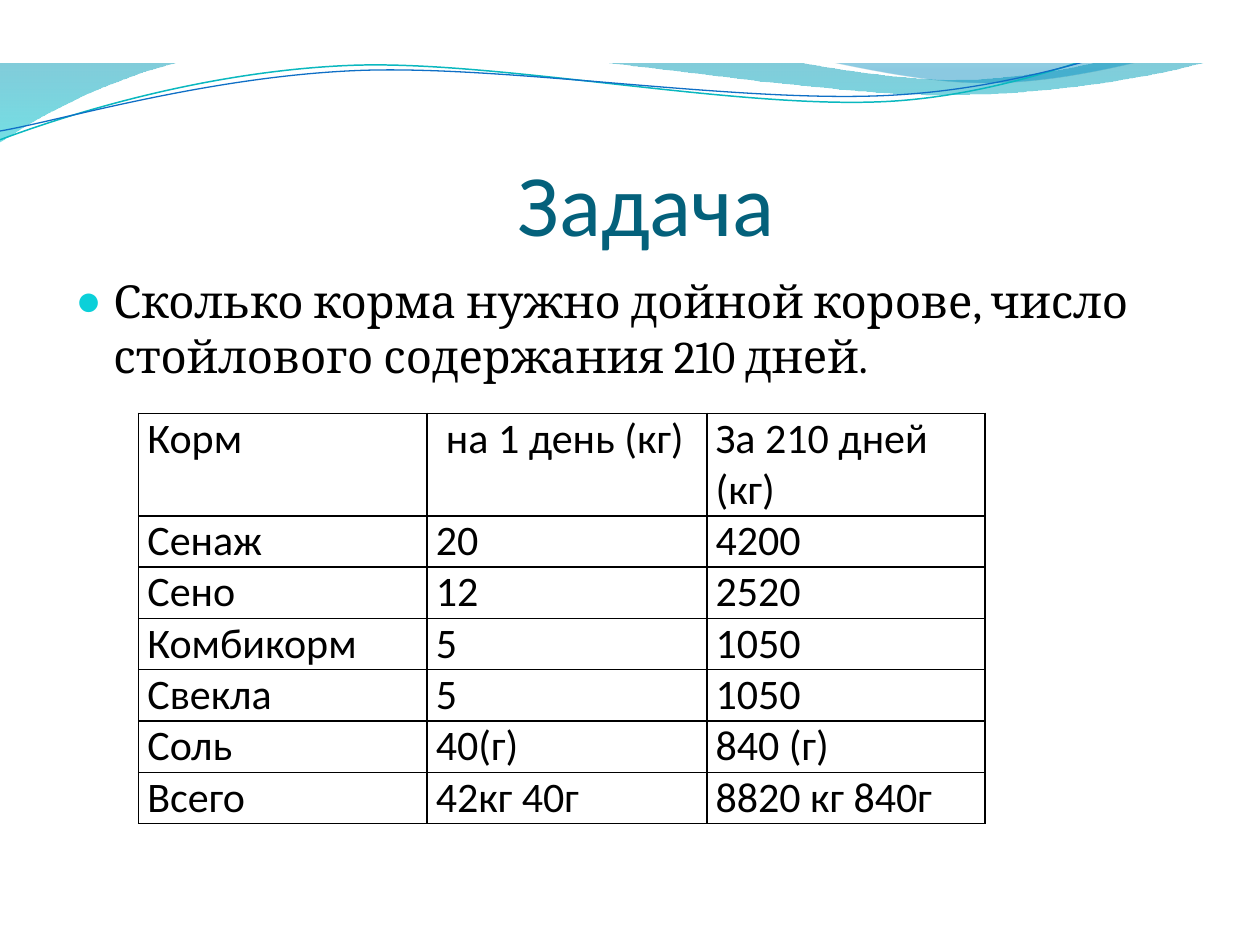
import math
from dataclasses import dataclass

from lxml import etree
from pptx import Presentation
from pptx.dml.color import RGBColor
from pptx.enum import shapes, text
from pptx.oxml import ns
from pptx.util import Inches, Pt


@dataclass(frozen=True)
class Theme:
    title: str = "04617B"
    ink: str = "000000"
    paper: str = "FFFFFF"
    bullet: str = "0BD0D9"
    heading_font: str = "Calibri"
    body_font: str = "Cambria"
    title_size: int = 50
    body_size: int = 26
    table_size: int = 24


THEME = Theme()
WAVE_TILT = -2.7

# Bands: box, start, segments (2 numbers = line, 6 = curve),
# gradient (position, colour, opacity)
BANDS = [
    ((-0.01, -0.01, 10.02, 1.14), (0, 0),
     [(4.4, -0.01), (4.76, 0.17, 6.64, 0.63, 7.58, 0.63),
      (8.53, 0.63, 9.58, 0.26, 10, 0.09), (10.01, 0.36),
      (9.83, 0.44, 8.7, 0.76, 7.46, 0.75), (6.22, 0.75, 3.82, 0.28, 2.57, 0.34),
      (1.29, 0.36, 0.46, 0.83, -0.01, 1.13), (0, 0)],
     [(0, "0074A1", 45), (1, "00C6CF", 55)]),
    ((4.79, -0.01, 5.21, 0.7), (4.79, -0.01),
     [(5.09, 0.11, 6.82, 0.62, 7.69, 0.65), (8.56, 0.69, 9.61, 0.32, 10, 0.21),
      (10, 0), (4.79, -0.01)],
     [(0, "00A1A9", 30), (0.8, "008BBF", 45)]),
]

# Thin waves: box before tilting, start, segments, colour, width
WAVES = [
    ((-0.02, 0.22, 10.02, 0.71), (0, 1.11),
     [(0.48, 0.93, 1.58, 0.57, 2.77, 0.52), (3.95, 0.47, 5.93, 0.89, 7.13, 0.8),
      (8.33, 0.71, 9.38, 0.15, 9.98, -0.02)], "0AB8BF", 0.85),
    ((-0.02, 0.3, 10.03, 0.58), (0, 1.04),
     [(0.47, 0.96, 1.64, 0.61, 2.83, 0.56), (4.03, 0.51, 5.97, 0.84, 7.17, 0.75),
      (8.36, 0.67, 9.41, 0.21, 10, 0.06)], "0F6FC6", 0.75),
]

FEED = [
    ("Корм", "на 1 день (кг)", "За 210 дней (кг)"),
    ("Сенаж", "20", "4200"),
    ("Сено", "12", "2520"),
    ("Комбикорм", "5", "1050"),
    ("Свекла", "5", "1050"),
    ("Соль", "40(г)", "840 (г)"),
    ("Всего", "42кг 40г", "8820 кг 840г"),
]


def rgb(value):
    return RGBColor.from_string(value)


def apply(target, values):
    for name, value in values.items():
        setattr(target, name, value)


def place(sp, box):
    apply(sp, dict(zip(("left", "top", "width", "height"), map(Inches, box))))


def child(parent, tag, **attrs):
    return etree.SubElement(parent, ns.qn(tag), attrs)


def style_font(p, name, size, color):
    for r in p.runs:
        apply(r.font, {"name": name, "size": Pt(size)})
        r.font.color.rgb = rgb(color)


def add_outline(s, box, start, segments, close, tilt=0):
    """Freeform of lines and cubic curves; the box is the one before tilting."""
    left, top, width, height = box
    cx, cy = left + width / 2, top + height / 2
    cos, sin = math.cos(math.radians(tilt)), math.sin(math.radians(tilt))

    def local(x, y):
        dx, dy = x - cx, y - cy
        return (Inches(dx * cos + dy * sin + width / 2),
                Inches(dy * cos - dx * sin + height / 2))

    builder = s.shapes.build_freeform(*local(*start))
    builder.add_line_segments([local(*seg[-2:]) for seg in segments], close=close)
    sp = builder.convert_to_shape()
    place(sp, box)
    apply(sp, {"rotation": tilt})
    sp.shadow.inherit = False

    # Write the steps with true curves
    route = next(sp._element.iter(ns.qn("a:path")))
    for node in list(route):
        route.remove(node)
    route.set("w", str(Inches(width)))
    route.set("h", str(Inches(height)))
    tags = {2: "a:lnTo", 6: "a:cubicBezTo"}
    steps = [("a:moveTo", start)] + [(tags[len(seg)], seg) for seg in segments]
    for tag, numbers in steps:
        step = child(route, tag)
        for point in zip(numbers[::2], numbers[1::2]):
            x, y = local(*point)
            child(step, "a:pt", x=str(x), y=str(y))
    if close:
        child(route, "a:close")
    return sp


def add_band(s, box, start, segments, gradient):
    sp = add_outline(s, box, start, segments, True)
    sp.line.fill.background()
    sp.fill.gradient()
    sp.fill.gradient_angle = 270
    for stop, (position, color, _) in zip(sp.fill.gradient_stops, gradient):
        stop.position = position
        stop.color.rgb = rgb(color)
    colors = sp._element.spPr.iter(ns.qn("a:srgbClr"))
    for node, (_, _, opacity) in zip(list(colors), gradient):
        child(node, "a:alpha", val=str(opacity * 1000))


def add_wave(s, box, start, segments, color, width):
    sp = add_outline(s, box, start, segments, False, WAVE_TILT)
    sp.fill.background()
    sp.line.color.rgb = rgb(color)
    sp.line.width = Pt(width)


def fill_placeholder(s, sp, words, box, frame):
    s.shapes._spTree.append(sp._element)  # in front of the waves
    place(sp, box)
    tf = sp.text_frame
    tf.text = words
    apply(tf, {"word_wrap": True, "auto_size": text.MSO_AUTO_SIZE.NONE, **frame})
    p = tf.paragraphs[0]
    apply(p, {"alignment": text.PP_ALIGN.LEFT, "space_before": Pt(0)})
    return p


def indent(p, left, first=0):
    pPr = p._p.get_or_add_pPr()
    pPr.set("marL", str(Inches(left)))
    pPr.set("indent", str(Inches(first)))
    return pPr


def add_bullet(p):
    pPr = indent(p, 0.3, -0.3)
    child(child(pPr, "a:buClr"), "a:srgbClr", val=THEME.bullet)
    child(pPr, "a:buSzPct", val="95000")
    child(pPr, "a:buChar", char="●")


def add_borders(cell):
    tcPr = cell._tc.get_or_add_tcPr()
    for side in ("L", "R", "T", "B"):
        line = child(tcPr, f"a:ln{side}", w=str(Pt(1)))
        child(child(line, "a:solidFill"), "a:srgbClr", val=THEME.ink)


def add_feed_table(s, rows, left, top, widths, heights):
    table = s.shapes.add_table(len(rows), len(widths), Inches(left), Inches(top),
                               Inches(sum(widths)), Inches(sum(heights))).table
    apply(table, {"first_row": False, "horz_banding": False})
    for column, width in zip(table.columns, widths):
        column.width = Inches(width)
    for row, height, values in zip(table.rows, heights, rows):
        row.height = Inches(height)
        for cell, value in zip(row.cells, values):
            cell.text = value
            apply(cell, {"margin_left": Inches(0.07), "margin_right": Inches(0.07),
                         "margin_top": 0, "margin_bottom": 0})
            add_borders(cell)
            cell.fill.background()
            style_font(cell.text_frame.paragraphs[0], THEME.heading_font,
                       THEME.table_size, THEME.ink)
    return table


def main():
    prs = Presentation()
    apply(prs, {"slide_width": Inches(10), "slide_height": Inches(7.5)})
    s = prs.slides.add_slide(prs.slide_layouts[1])
    # Wave decoration
    for band in BANDS:
        add_band(s, *band)
    for wave in WAVES:
        add_wave(s, *wave)
    # Title and question
    title, body = s.placeholders
    p = fill_placeholder(s, title, "Задача", (0.5, 0.77, 9, 1.25), {
        "vertical_anchor": text.MSO_ANCHOR.BOTTOM, "margin_left": 0,
        "margin_right": 0, "margin_top": Inches(0.05), "margin_bottom": 0})
    indent(p, 3.61)
    style_font(p, THEME.heading_font, THEME.title_size, THEME.title)
    p = fill_placeholder(
        s, body, "Сколько корма нужно дойной корове, число стойлового содержания 210 дней.",
        (0.5, 2.12, 9, 4.8), {"vertical_anchor": text.MSO_ANCHOR.TOP})
    add_bullet(p)
    style_font(p, THEME.body_font, THEME.body_size, THEME.ink)
    # Feed table
    table = add_feed_table(s, FEED, 1.1, 3.28, (2.29, 2.22, 2.21), [0.8] + [0.4] * 6)
    indent(table.cell(0, 1).text_frame.paragraphs[0], 0.08)
    # White strip along the top
    strip = s.shapes.add_shape(shapes.MSO_SHAPE.RECTANGLE, 0, 0, Inches(10), Inches(0.5))
    strip.shadow.inherit = False
    strip.fill.solid()
    strip.fill.fore_color.rgb = rgb(THEME.paper)
    strip.line.fill.background()
    prs.save("out.pptx")


if __name__ == "__main__":
    main()
